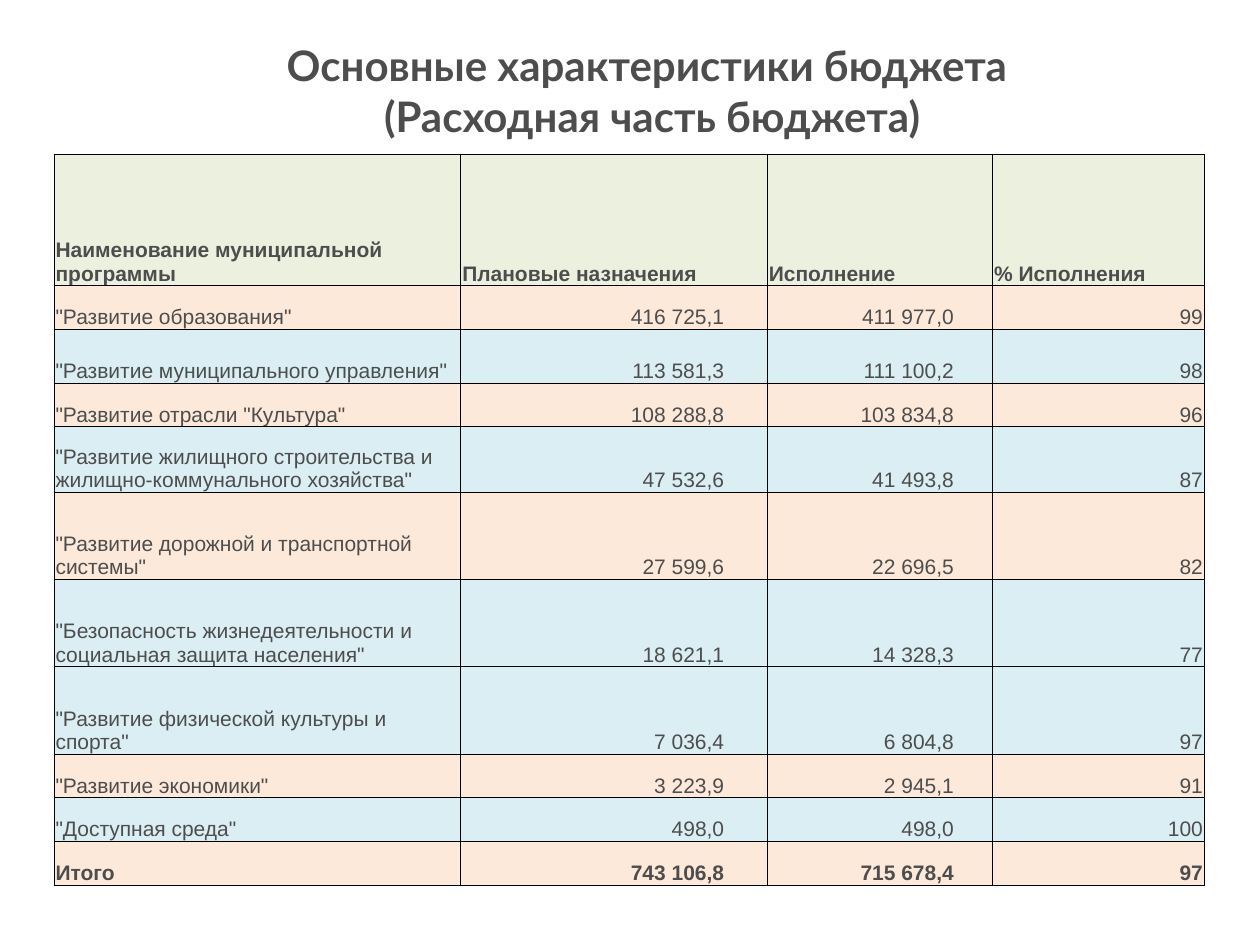
from lxml import etree
from pptx import Presentation
from pptx.dml.color import RGBColor
from pptx.enum.text import MSO_ANCHOR, PP_ALIGN
from pptx.oxml.ns import qn
from pptx.util import Cm, Pt

# Content
TITLE = ["Основные характеристики бюджета ", "(Расходная часть бюджета)"]
HEADER = ["Наименование муниципальной программы", "Плановые назначения",
          "Исполнение", "% Исполнения"]
PROGRAMS = [
    ('"Развитие образования"', "416 725,1", "411 977,0", "99"),
    ('"Развитие муниципального управления"', "113 581,3", "111 100,2", "98"),
    ('"Развитие отрасли "Культура"', "108 288,8", "103 834,8", "96"),
    ('"Развитие жилищного строительства и жилищно-коммунального хозяйства"',
     "47 532,6", "41 493,8", "87"),
    ('"Развитие дорожной и транспортной системы"', "27 599,6", "22 696,5", "82"),
    ('"Безопасность жизнедеятельности и социальная защита населения"',
     "18 621,1", "14 328,3", "77"),
    ('"Развитие физической культуры и спорта"', "7 036,4", "6 804,8", "97"),
    ('"Развитие экономики"', "3 223,9", "2 945,1", "91"),
    ('"Доступная среда"', "498,0", "498,0", "100"),
]
TOTAL = ("Итого", "743 106,8", "715 678,4", "97")

# Style and measures (cm)
TEXT, GREEN, PEACH, BLUE = "4D4D4D", "EBF1DE", "FDE9D9", "DAEEF3"
ROW_FILLS = [GREEN, PEACH, BLUE, PEACH, BLUE, PEACH, BLUE, BLUE, PEACH, BLUE, PEACH]
COL_WIDTHS = [8.2, 6.18, 4.54, 4.27]
ROW_HEIGHTS = [2.64, 0.88, 1.08, 0.88, 1.32, 1.76, 1.76, 1.76, 0.88, 0.88, 0.88]
PAD = 0.03
NUMBER_INDENTS = [PAD, 0.87, 0.78, PAD]


def color(hex_value):
    return RGBColor.from_string(hex_value)


def add_run(p, text, font, size, bold):
    r = p.add_run()
    r.text = text
    r.font.name, r.font.size, r.font.bold = font, Pt(size), bold
    r.font.color.rgb = color(TEXT)


def add_borders(cell):
    tc_pr = cell._tc.get_or_add_tcPr()
    for i, side in enumerate(("lnL", "lnR", "lnT", "lnB")):
        line = etree.Element(qn(f"a:{side}"), w=str(Pt(0.5)))
        fill = etree.SubElement(line, qn("a:solidFill"))
        etree.SubElement(fill, qn("a:srgbClr"), val="000000")
        tc_pr.insert(i, line)


def fill_cell(cell, text, fill, bold, align, right_margin):
    cell.fill.solid()
    cell.fill.fore_color.rgb = color(fill)
    add_borders(cell)
    cell.vertical_anchor = MSO_ANCHOR.BOTTOM
    cell.margin_left = cell.margin_top = Cm(PAD)
    cell.margin_right, cell.margin_bottom = Cm(right_margin), 0
    p = cell.text_frame.paragraphs[0]
    p.alignment = align
    add_run(p, text, "Arial", 12, bold)


prs = Presentation()
prs.slide_width, prs.slide_height = Cm(25.4), Cm(19.05)
s = prs.slides.add_slide(prs.slide_layouts[6])

# Title
tf = s.shapes.add_textbox(Cm(3.3), Cm(1.12), Cm(19.69), Cm(1.4)).text_frame
tf.word_wrap = True
tf.vertical_anchor = MSO_ANCHOR.MIDDLE
p = tf.paragraphs[0]
p.alignment = PP_ALIGN.CENTER
for i, line in enumerate(TITLE):
    if i:
        p.add_line_break()
    add_run(p, line, "Lato", 24, True)

# Budget table
rows = [HEADER, *PROGRAMS, TOTAL]
table = s.shapes.add_table(len(rows), len(HEADER), Cm(1.09), Cm(3.12),
                           Cm(sum(COL_WIDTHS)), Cm(sum(ROW_HEIGHTS))).table
table.first_row = table.horz_banding = False
for column, width in zip(table.columns, COL_WIDTHS):
    column.width = Cm(width)
for i, (values, height, fill) in enumerate(zip(rows, ROW_HEIGHTS, ROW_FILLS)):
    table.rows[i].height = Cm(height)
    for j, value in enumerate(values):
        is_number = i > 0 and j > 0
        fill_cell(table.cell(i, j), value, fill,
                  bold=i in (0, len(rows) - 1),
                  align=PP_ALIGN.RIGHT if is_number else PP_ALIGN.LEFT,
                  right_margin=NUMBER_INDENTS[j] if is_number else PAD)

prs.save("out.pptx")
